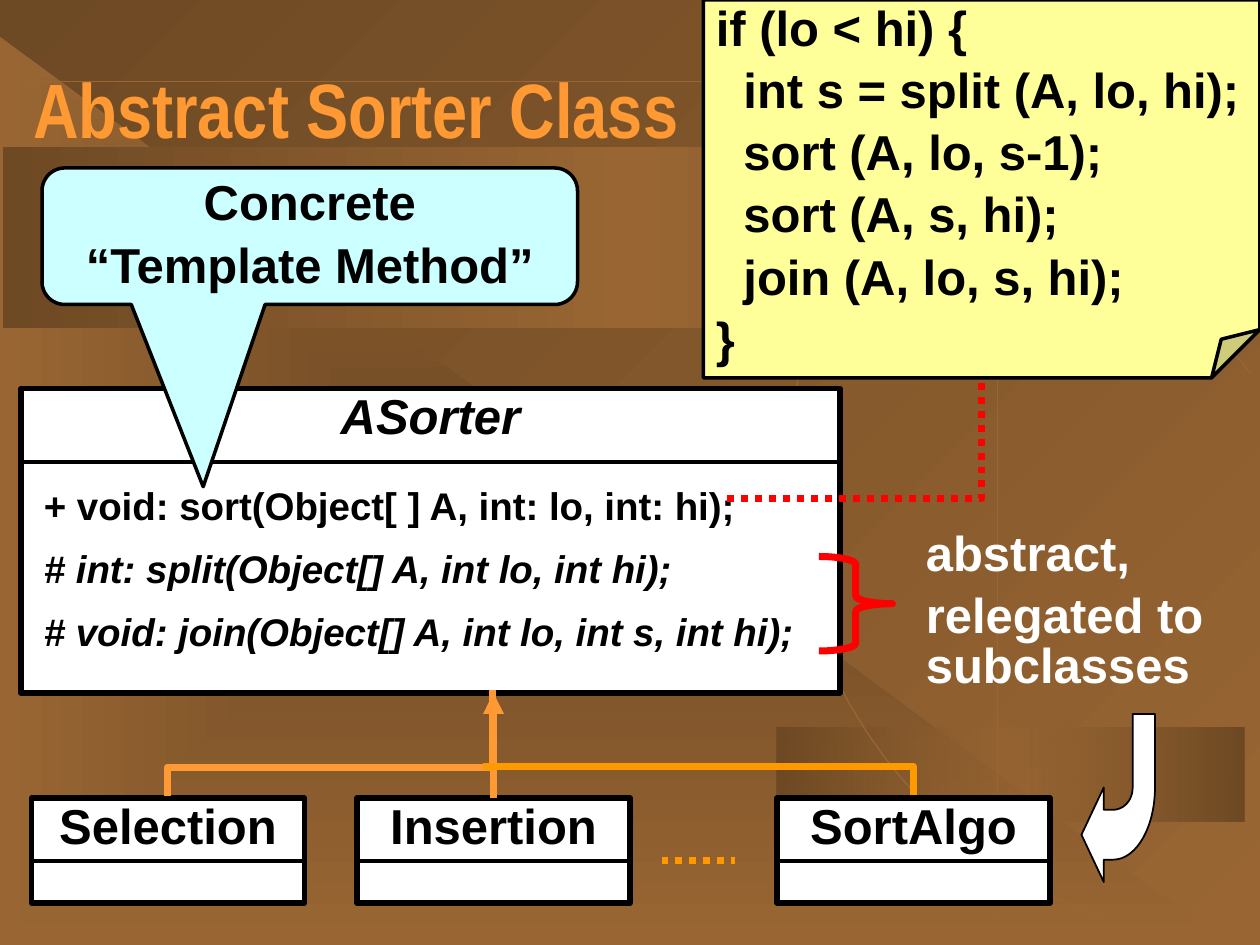
"""Build the Abstract Sorter Class slide."""
import pptx
import pptx.dml.color
import pptx.enum.dml
import pptx.enum.shapes
import pptx.enum.text
import pptx.oxml
import pptx.oxml.ns
import pptx.util

PX = 9525
COLORS = {
    "dark": "6D4924", "brown": "996633", "title": "FF9933", "orange": "FF9900",
    "black": "000000", "white": "FFFFFF", "red": "FF0000",
    "note": "FFFF99", "callout": "CCFFFF",
}
SHAPE = pptx.enum.shapes.MSO_SHAPE
CONNECTOR = pptx.enum.shapes.MSO_CONNECTOR
ALIGN = pptx.enum.text.PP_ALIGN
ANCHOR = pptx.enum.text.MSO_ANCHOR
AUTO_SIZE = pptx.enum.text.MSO_AUTO_SIZE
DOTTED = pptx.enum.dml.MSO_LINE.ROUND_DOT
BANDS = [(0, "dark", 100), (50, "brown", 100), (100, "dark", 100)]
GLASS = [(0, "dark", 100), (50, "brown", 50), (100, "dark", 100)]
SLOPE = [(0, "dark", 100), (100, "brown", 100)]
LINEAR = '<a:lin ang="{}" scaled="1"/>'
CENTERED = ('<a:path path="shape"><a:fillToRect l="50000" t="50000" '
            'r="50000" b="50000"/></a:path>')


def px(*lengths):
    """Turn px lengths into EMU."""
    return [pptx.util.Emu(int(round(length * PX))) for length in lengths]


def rgb(name):
    """Look up a named colour."""
    return pptx.dml.color.RGBColor.from_string(COLORS[name])


def set_values(target, values):
    """Set attributes from a dict of format values."""
    for name, value in values.items():
        setattr(target, name, value)


def set_line(line, color, width, dash=None):
    """Colour a line and give it a width and dash."""
    line.color.rgb = rgb(color)
    line.width = pptx.util.Pt(width)
    if dash:
        line.dash_style = dash


def set_fill(shape, color):
    """Give a shape a solid fill, or none."""
    if color:
        shape.fill.solid()
        shape.fill.fore_color.rgb = rgb(color)
    else:
        shape.fill.background()


def set_guides(shape, guides):
    """Write the adjustment guides of a preset shape or connector."""
    geometry = shape._element.spPr.find(pptx.oxml.ns.qn("a:prstGeom"))
    values = geometry.get_or_add_avLst()
    for old in list(values):
        values.remove(old)
    for name, value in guides.items():
        values.append(pptx.oxml.parse_xml(
            f'<a:gd {pptx.oxml.ns.nsdecls("a")} name="{name}" fmla="val {value}"/>'))


def paint_gradient(fill, element, stops, direction):
    """Give a fill the listed gradient stops and direction."""
    fill.gradient()
    namespace = pptx.oxml.ns.nsdecls("a")
    marks = "".join(
        f'<a:gs pos="{position * 1000}"><a:srgbClr val="{COLORS[color]}">'
        f'<a:alpha val="{alpha * 1000}"/></a:srgbClr></a:gs>'
        for position, color, alpha in stops)
    gradient = next(element.iter(pptx.oxml.ns.qn("a:gradFill")))
    gradient.getparent().replace(gradient, pptx.oxml.parse_xml(
        f'<a:gradFill {namespace} rotWithShape="1"><a:gsLst>{marks}</a:gsLst>'
        f'{direction}</a:gradFill>'))


def add_panel(slide, kind, box, stops, direction):
    """Add a borderless gradient shape."""
    panel = slide.shapes.add_shape(kind, *px(*box))
    panel.shadow.inherit = False
    panel.line.fill.background()
    paint_gradient(panel.fill, panel._element, stops, direction)


def add_box(slide, kind, box, fill, line, guides=None):
    """Add an outlined shape with an optional solid fill."""
    shape = slide.shapes.add_shape(kind, *px(*box))
    shape.shadow.inherit = False
    set_fill(shape, fill)
    set_line(shape.line, *line)
    if guides:
        set_guides(shape, guides)
    return shape


def write_text(shape, lines, size=28, color="black", align=ALIGN.LEFT, font="Arial",
               italic=False, wrap=False, anchor=ANCHOR.TOP, grow=False, indents=()):
    """Write bold paragraphs into a shape."""
    frame = shape.text_frame
    set_values(frame, {
        "word_wrap": wrap, "vertical_anchor": anchor,
        "auto_size": AUTO_SIZE.SHAPE_TO_FIT_TEXT if grow else AUTO_SIZE.NONE,
    })
    for index, line in enumerate(lines):
        paragraph = frame.add_paragraph() if index else frame.paragraphs[0]
        set_values(paragraph, {"alignment": align, "line_spacing": 0.85,
                               "space_before": pptx.util.Pt(size / 4)})
        if index in indents:
            paragraph._p.get_or_add_pPr().set("marL", str(21 * PX))
        run = paragraph.add_run()
        run.text = line
        set_values(run.font, {"name": font, "size": pptx.util.Pt(size),
                              "bold": True, "italic": italic})
        run.font.color.rgb = rgb(color)


def add_text(slide, box, lines, **style):
    """Add a text box."""
    write_text(slide.shapes.add_textbox(*px(*box)), lines, **style)


def add_line(slide, ends, color, width, dash=None, kind=CONNECTOR.STRAIGHT, arrow=False):
    """Add a connector without a shadow."""
    connector = slide.shapes.add_connector(kind, *px(*ends))
    set_line(connector.line, color, width, dash)
    namespace = pptx.oxml.ns.nsdecls("a")
    if arrow:
        connector.line._get_or_add_ln().append(
            pptx.oxml.parse_xml(f'<a:tailEnd {namespace} type="triangle"/>'))
    connector._element.spPr.append(pptx.oxml.parse_xml(f'<a:effectLst {namespace}/>'))
    return connector


def add_elbow(slide, ends, color, dash=None, rotation=0, bend=None):
    """Add a one-corner elbow, or a two-corner one with the given bend."""
    elbow = add_line(slide, ends, color, 4, dash, CONNECTOR.ELBOW)
    elbow.rotation = rotation
    if bend is None:
        geometry = elbow._element.spPr.find(pptx.oxml.ns.qn("a:prstGeom"))
        geometry.set("prst", "bentConnector2")
    else:
        set_guides(elbow, {"adj1": bend})


def curve(*controls, steps=24):
    """Sample a cubic curve, leaving out its start."""
    points = []
    for step in range(1, steps + 1):
        t = step / steps
        weights = ((1 - t) ** 3, 3 * t * (1 - t) ** 2, 3 * t * t * (1 - t), t ** 3)
        points.append(tuple(sum(weight * point[axis] for weight, point in
                                zip(weights, controls)) for axis in (0, 1)))
    return points


def add_outline(slide, points, line, fill=None):
    """Add a freeform, closed when it has a fill."""
    builder = slide.shapes.build_freeform(*px(*points[0]), scale=1.0)
    builder.add_line_segments([px(*point) for point in points[1:]], close=bool(fill))
    shape = builder.convert_to_shape()
    shape.shadow.inherit = False
    set_fill(shape, fill)
    set_line(shape.line, *line)


def add_class(slide, box, name, divider, italic=False):
    """Add a class box with its name and divider."""
    left, top, width, height = box
    shape = add_box(slide, SHAPE.RECTANGLE, box, "white", ("black", 3))
    write_text(shape, [name], align=ALIGN.CENTER, italic=italic)
    add_line(slide, (left, divider, left + width, divider), "black", 2)
    return shape


def add_backdrop(slide):
    """Add the brown panels, arcs and thin lines."""
    paint_gradient(slide.background.fill, slide._element, SLOPE, LINEAR.format(2700000))
    add_panel(slide, SHAPE.RIGHT_TRIANGLE, (0, 28, 936, 692), SLOPE, CENTERED)
    add_panel(slide, SHAPE.RECTANGLE, (592, 554, 356, 72), GLASS, LINEAR.format(0))
    add_panel(slide, SHAPE.RECTANGLE, (2, 112, 958, 138), BANDS, LINEAR.format(0))
    large = [(944, 0), *curve((944, 0), (752, 10), (601, 168), (601, 360)),
             *curve((601, 360), (601, 553), (754, 712), (947, 720))]
    small = [(728, -1), *curve((728, -1), (764, 95), (855, 158), (957, 160))]
    for arc in (large, small):
        add_outline(slide, arc, ("brown", 0.75))
    for ends in ((953, 284, 705, -2), (760, -1, 760, 714), (0, 62, 960, 62)):
        add_line(slide, ends, "brown", 0.75)


def add_sorter(slide):
    """Add the abstract class, its code note, brace and callout."""
    add_class(slide, (16, 296, 624, 232), "ASorter", 352, italic=True)
    methods = [("+ void: sort(Object[ ] A, int: lo, int: hi);", 550, False),
               ("# int: split(Object[] A, int lo, int hi);", 502, True),
               ("# void: join(Object[] A, int lo, int s, int hi);", 595, True)]
    for row, (method, width, italic) in enumerate(methods):
        add_text(slide, (24, 368 + 48 * row, width, 39), [method],
                 size=22, italic=italic, grow=True)
    note = add_box(slide, SHAPE.FOLDED_CORNER, (536, 0, 424, 288), "note",
                   ("black", 2), {"adj": 12800})
    write_text(note, ["if (lo < hi) {", "int s = split (A, lo, hi);", "sort (A, lo, s-1);",
                      "sort (A, s, hi);", "join (A, lo, s, hi);", "}"], indents=range(1, 5))
    add_elbow(slide, (554, 380, 748, 289), "red", DOTTED)
    add_box(slide, SHAPE.RIGHT_BRACE, (624, 424, 56, 72), None, ("red", 4),
            {"adj1": 10700, "adj2": 50000})
    callout = add_box(slide, SHAPE.ROUNDED_RECTANGULAR_CALLOUT, (32, 128, 408, 104),
                      "callout", ("black", 2),
                      {"adj1": -19900, "adj2": 183500, "adj3": 16700})
    write_text(callout, ["Concrete", "“Template Method”"], align=ALIGN.CENTER, wrap=True)


def add_subclasses(slide):
    """Add the concrete classes, their links and the remark."""
    boxes = {name: add_class(slide, (left, 608, 208, 80), name, 656)
             for name, left in (("SortAlgo", 592), ("Selection", 24), ("Insertion", 272))}
    link = add_line(slide, (376, 608, 376, 528), "title", 4, arrow=True)
    link.begin_connect(boxes["Insertion"], 0)
    add_elbow(slide, (211, 442, 292, 690), "title", rotation=270, bend=27300)
    add_elbow(slide, (543, 431, 521, 759), "orange", rotation=90)
    add_line(slide, (504, 656, 560, 656), "orange", 4, DOTTED)
    add_text(slide, (696, 400, 264, 133), ["abstract,", "relegated to subclasses"],
             color="white", wrap=True, grow=True)
    arrow = [(824, 636), (841, 672), (841, 655), (848, 655),
             *curve((848, 655), (866, 655), (880, 630), (880, 600)),
             (880, 544), (863, 544), (863, 600),
             *curve((863, 600), (863, 610), (856, 617), (848, 617)),
             (841, 617), (841, 600)]
    add_outline(slide, arrow, ("black", 1), "white")


def main():
    """Build and save the slide."""
    presentation = pptx.Presentation()
    presentation.slide_width, presentation.slide_height = px(960, 720)
    slide = presentation.slides.add_slide(presentation.slide_layouts[6])
    add_backdrop(slide)
    add_text(slide, (16, 24, 528, 98), ["Abstract Sorter Class"], size=44, color="title",
             font="Arial Narrow", wrap=True, anchor=ANCHOR.BOTTOM)
    add_sorter(slide)
    add_subclasses(slide)
    presentation.save("out.pptx")


if __name__ == "__main__":
    main()
